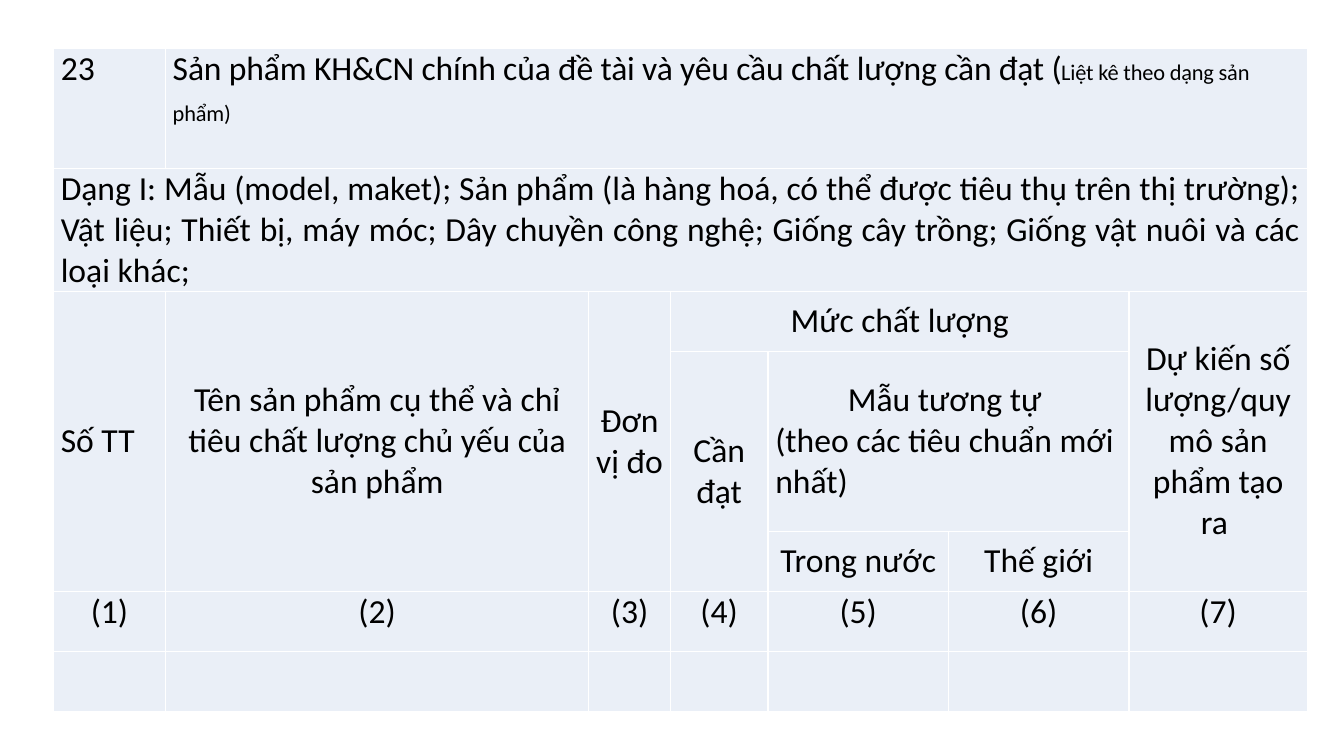
from lxml import etree
from pptx import Presentation
from pptx import util as u
from pptx.dml.color import RGBColor
from pptx.enum import text
from pptx.oxml.ns import qn

COLORS = {"cell": "EAEFF7", "border": "FFFFFF", "text": "000000"}
FONT = "Calibri"
LEFT, CENTER, JUSTIFY = text.PP_ALIGN.LEFT, text.PP_ALIGN.CENTER, text.PP_ALIGN.JUSTIFY
TOP, MIDDLE = text.MSO_ANCHOR.TOP, text.MSO_ANCHOR.MIDDLE

TABLE_BOX = (38.2, 34.6, 895.7, 471.6)
COLUMN_WIDTHS = [80, 302.4, 58.2, 69.8, 128.9, 128.9, 127.5]
ROW_HEIGHTS = [85.6, 85.6, 42.8, 128.4, 42.8, 42.8, 42.8]

PRODUCT_TYPES = (
    "Dạng I: Mẫu (model, maket); Sản phẩm (là hàng hoá, có thể được tiêu thụ "
    "trên thị trường); Vật liệu; Thiết bị, máy móc; Dây chuyền công nghệ; "
    "Giống cây trồng; Giống vật nuôi và các loại khác;"
)
HEADINGS = [
    (2, 0, 3, 1, "Số TT", LEFT),
    (2, 1, 3, 1, "Tên sản phẩm cụ thể và chỉ tiêu chất lượng chủ yếu của sản phẩm", CENTER),
    (2, 2, 3, 1, "Đơn vị đo", CENTER),
    (2, 3, 1, 3, "Mức chất lượng", CENTER),
    (2, 6, 3, 1, "Dự kiến số lượng/quy mô sản phẩm tạo ra ", CENTER),
    (3, 3, 2, 1, "Cần đạt", CENTER),
    (4, 4, 1, 1, "Trong nước", CENTER),
    (4, 5, 1, 1, "Thế giới", CENTER),
]


def add_text(paragraph, content, size=24, align=LEFT, spacing=3, tracking=0):
    """Append a formatted run to a paragraph."""
    paragraph.alignment = align
    paragraph.space_before = paragraph.space_after = u.Pt(spacing)
    run = paragraph.add_run()
    run.text = content
    run.font.name = FONT
    run.font.size = u.Pt(size)
    run.font.color.rgb = RGBColor.from_string(COLORS["text"])
    if tracking:
        run.font._element.set("spc", str(round(tracking * 100)))


def style_cell(cell):
    """Give a cell its fill, margins and four borders."""
    cell.fill.solid()
    cell.fill.fore_color.rgb = RGBColor.from_string(COLORS["cell"])
    cell.margin_left = cell.margin_right = u.Pt(5.2)
    cell.margin_top = cell.margin_bottom = u.Pt(0)
    properties = cell._tc.get_or_add_tcPr()
    for index, side in enumerate(("a:lnL", "a:lnR", "a:lnT", "a:lnB")):
        line = etree.Element(qn(side), w=str(u.Pt(1)))
        fill = etree.SubElement(line, qn("a:solidFill"))
        etree.SubElement(fill, qn("a:srgbClr"), val=COLORS["border"])
        properties.insert(index, line)


def merged_cell(table, row, column, rows=1, columns=1, anchor=TOP):
    """Return a cell spanning the given rows and columns."""
    cell = table.cell(row, column)
    if rows * columns > 1:
        cell.merge(table.cell(row + rows - 1, column + columns - 1))
    cell.vertical_anchor = anchor
    return cell


def add_grid(slide, box):
    """Add the empty styled table, scaled to its box."""
    left, top, width, height = box
    frame = slide.shapes.add_table(
        len(ROW_HEIGHTS), len(COLUMN_WIDTHS), *(u.Pt(length) for length in box)
    )
    table = frame.table
    table.first_row = table.horz_banding = False
    for column, share in zip(table.columns, COLUMN_WIDTHS):
        column.width = u.Pt(width * share / sum(COLUMN_WIDTHS))
    for row, share in zip(table.rows, ROW_HEIGHTS):
        row.height = u.Pt(height * share / sum(ROW_HEIGHTS))
    for cell in table.iter_cells():
        style_cell(cell)
    return table


def fill_introduction(table):
    """Write the numbered title and the list of product types."""
    add_text(table.cell(0, 0).text_frame.paragraphs[0], "23")
    title = merged_cell(table, 0, 1, columns=6).text_frame.paragraphs[0]
    add_text(title, "Sản phẩm KH&CN chính của đề tài và yêu cầu chất lượng cần đạt (", tracking=-0.1)
    add_text(title, "Liệt kê theo dạng sản phẩm)", size=16, tracking=-0.1)
    add_text(title, " ", tracking=-0.1)
    types = merged_cell(table, 1, 0, columns=7)
    add_text(types.text_frame.paragraphs[0], PRODUCT_TYPES, align=JUSTIFY)


def fill_headings(table):
    """Write the merged column headings and the column numbers."""
    for row, column, rows, columns, content, align in HEADINGS:
        cell = merged_cell(table, row, column, rows, columns, MIDDLE)
        add_text(cell.text_frame.paragraphs[0], content, align=align)
    sample = merged_cell(table, 3, 4, columns=2, anchor=MIDDLE).text_frame
    add_text(sample.paragraphs[0], "Mẫu tương tự ", align=CENTER, spacing=0)
    add_text(sample.add_paragraph(), "(theo các tiêu chuẩn mới nhất)", spacing=0)
    for column in range(len(COLUMN_WIDTHS)):
        number = table.cell(5, column).text_frame.paragraphs[0]
        add_text(number, f"({column + 1})", align=CENTER, spacing=6)


def main():
    """Build and save the presentation."""
    presentation = Presentation()
    presentation.slide_width, presentation.slide_height = u.Pt(960), u.Pt(540)
    slide = presentation.slides.add_slide(presentation.slide_layouts[6])
    table = add_grid(slide, TABLE_BOX)
    fill_introduction(table)
    fill_headings(table)
    presentation.save("out.pptx")


if __name__ == "__main__":
    main()
